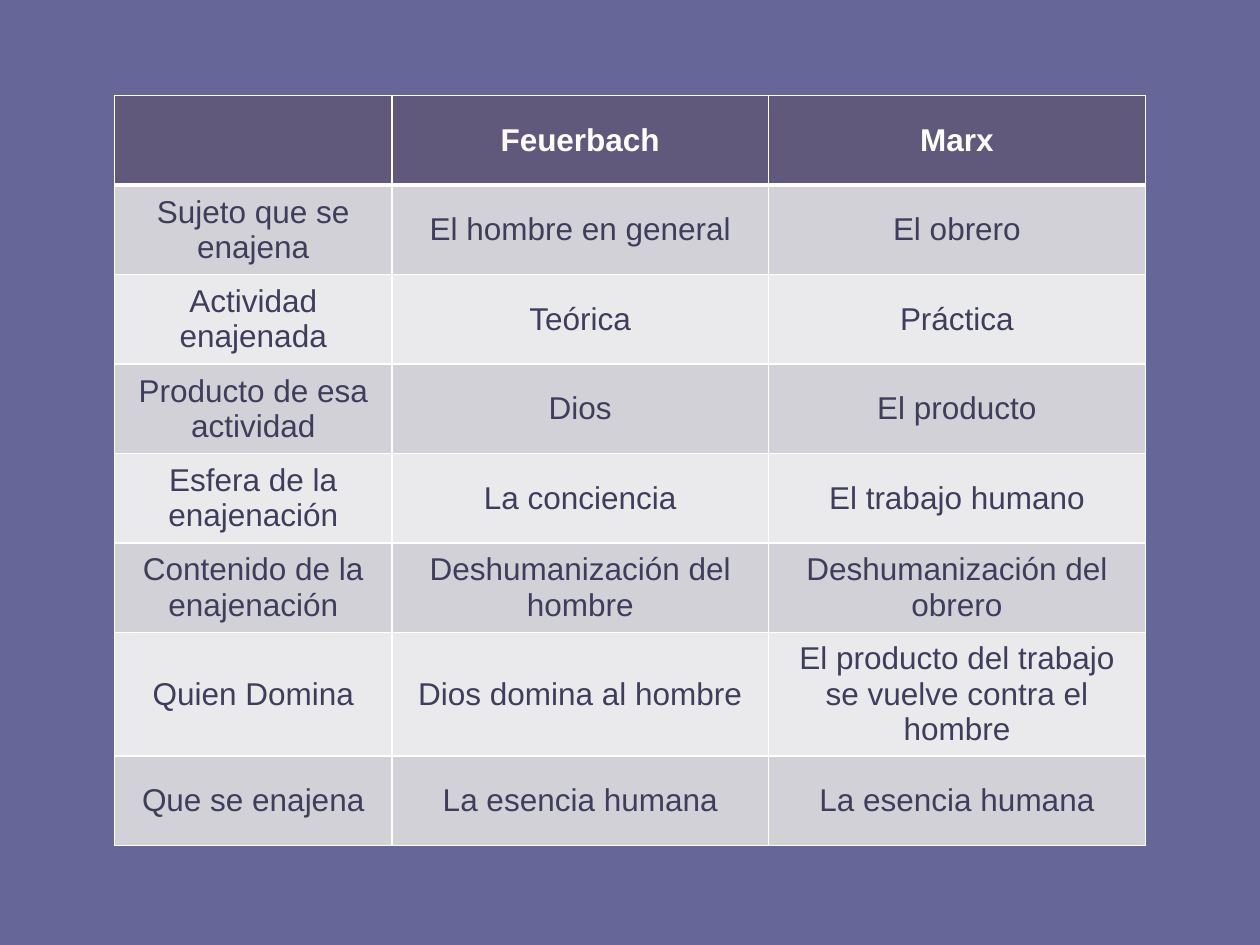
from lxml import etree
from pptx import Presentation
from pptx.dml.color import RGBColor
from pptx.enum.text import MSO_ANCHOR, PP_ALIGN
from pptx.oxml.ns import qn
from pptx.util import Inches, Pt

CENTER = PP_ALIGN.CENTER
MIDDLE = MSO_ANCHOR.MIDDLE

BACKGROUND, WHITE, TEXT = "666699", "FFFFFF", "3E3E5C"
HEADER, BANDS = "60597B", ("EAEAEC", "D2D1D7")
LEFT, TOP = 0.91, 0.76
COL_WIDTHS = (2.2, 2.99, 2.99)
ROW_HEIGHT, TALL_HEIGHT, TALL_ROW = 0.71, 0.98, 6
THIN, THICK = 1, 3

ROWS = [
    ("", "Feuerbach", "Marx"),
    ("Sujeto que se enajena", "El hombre en general", "El obrero"),
    ("Actividad enajenada", "Teórica", "Práctica"),
    ("Producto de esa actividad", "Dios", "El producto"),
    ("Esfera de la enajenación", "La conciencia", "El trabajo humano"),
    ("Contenido de la enajenación", "Deshumanización del hombre",
     "Deshumanización del obrero"),
    ("Quien Domina", "Dios domina al hombre",
     "El producto del trabajo se vuelve contra el hombre"),
    ("Que se enajena", "La esencia humana", "La esencia humana"),
]


def rgb(color):
    return RGBColor.from_string(color)


def set_borders(cell, widths):
    tcPr = cell._tc.get_or_add_tcPr()
    for side, width in zip("LRTB", widths):
        ln = etree.SubElement(tcPr, qn(f"a:ln{side}"), w=str(Pt(width)))
        fill = etree.SubElement(ln, qn("a:solidFill"))
        etree.SubElement(fill, qn("a:srgbClr"), val=WHITE)


def fill_cell(cell, text, row):
    is_header = row == 0
    set_borders(cell, (THIN, THIN, THICK if row == 1 else THIN,
                       THICK if is_header else THIN))
    cell.fill.solid()
    cell.fill.fore_color.rgb = rgb(HEADER if is_header else BANDS[row % 2])
    cell.vertical_anchor = MIDDLE
    cell.text = text
    p = cell.text_frame.paragraphs[0]
    p.alignment = CENTER
    p.font.name = "Arial"
    p.font.size = Pt(18)
    p.font.bold = is_header
    p.font.color.rgb = rgb(WHITE if is_header else TEXT)


prs = Presentation()
prs.slide_width, prs.slide_height = Inches(10), Inches(7.5)
s = prs.slides.add_slide(prs.slide_layouts[6])
s.background.fill.solid()
s.background.fill.fore_color.rgb = rgb(BACKGROUND)

heights = [TALL_HEIGHT if i == TALL_ROW else ROW_HEIGHT for i in range(len(ROWS))]
table = s.shapes.add_table(
    len(ROWS), len(COL_WIDTHS), Inches(LEFT), Inches(TOP),
    Inches(sum(COL_WIDTHS)), Inches(sum(heights))).table
for column, width in zip(table.columns, COL_WIDTHS):
    column.width = Inches(width)
for i, (height, texts) in enumerate(zip(heights, ROWS)):
    table.rows[i].height = Inches(height)
    for j, text in enumerate(texts):
        fill_cell(table.cell(i, j), text, i)

prs.save("out.pptx")
